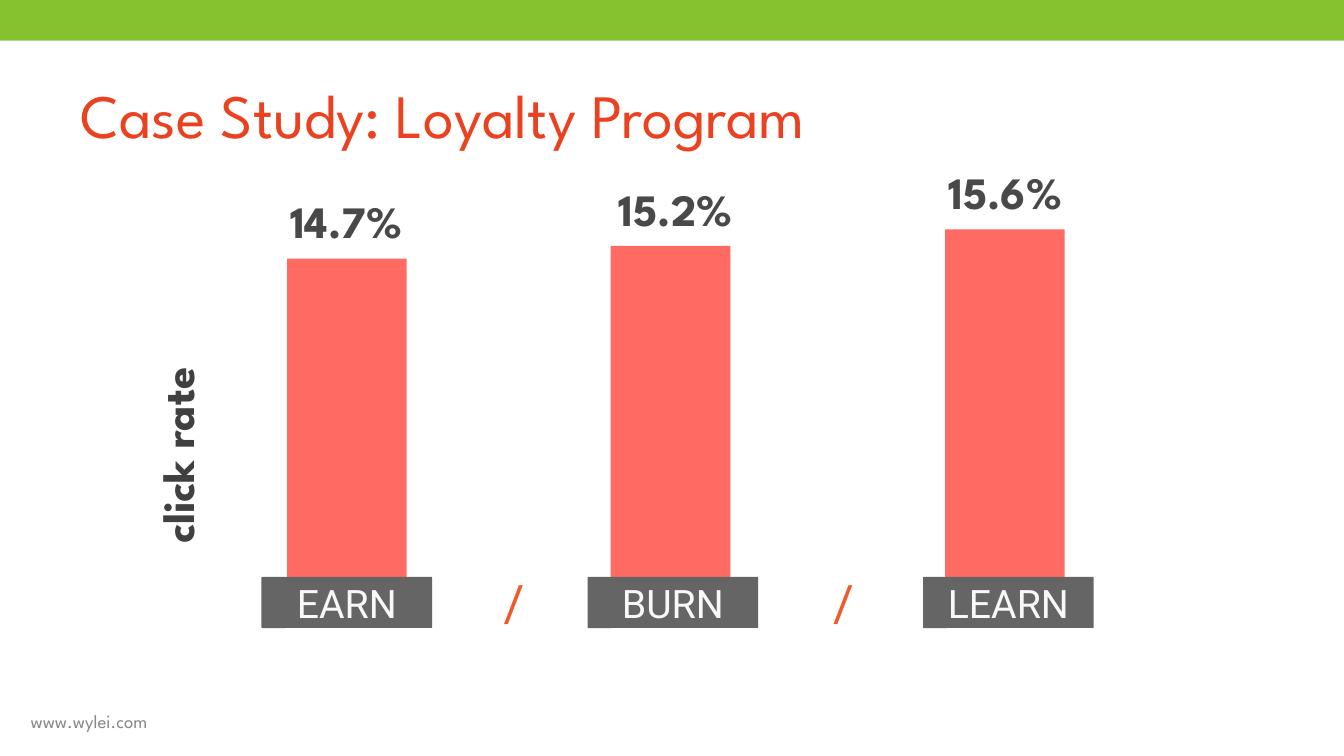
from pptx import Presentation
from pptx.dml.color import RGBColor
from pptx.enum.shapes import MSO_SHAPE as Shape
from pptx.enum.text import MSO_ANCHOR as Anchor, PP_ALIGN as Align
from pptx.util import Inches, Pt

COLORS = {
    "green": "86C230", "coral": "FF6B63", "tag": "656565",
    "title": "EA4220", "slash": "F05A2A", "value": "494949",
    "axis": "404040", "tag_text": "F8F8F8", "footer": "868686",
}
FORMATS = {
    "title": {"name": "League Spartan", "size": Pt(33), "bold": False},
    "value": {"name": "League Spartan", "size": Pt(24), "bold": True},
    "axis": {"name": "League Spartan", "size": Pt(24), "bold": True},
    "slash": {"name": "Roboto", "size": Pt(27)},
    "tag_text": {"name": "Roboto", "size": Pt(21)},
    "footer": {"name": "League Spartan", "size": Pt(10)},
}
# Grid cells are 0.1 inch square: 100 columns by 56.25 rows.
CELL = Inches(0.1)
COLUMNS, ROWS = 100, 56.25
BASELINE = 42.93
BAR_WIDTH, TAG_WIDTH, TAG_HEIGHT = 8.9, 12.7, 3.8
VALUE_WIDTH, VALUE_HEIGHT = 11.5, 5

# Name, value, bar left, bar top, tag left, value left, value top
BARS = [
    ("EARN", "14.7%", 21.36, 19.24, 19.46, 20, 13.9),
    ("BURN", "15.2%", 45.44, 18.3, 43.72, 44.52, 13.04),
    ("LEARN", "15.6%", 70.32, 17.06, 68.68, 69.04, 11.8),
]


def grid(*cells):
    return [round(cell * CELL) for cell in cells]


def write(frame, text, style, align=Align.LEFT):
    para = frame.paragraphs[0]
    para.alignment = align
    span = para.add_run()
    span.text = text
    for name, value in FORMATS[style].items():
        setattr(span.font, name, value)
    span.font.color.rgb = RGBColor.from_string(COLORS[style])


def add_block(page, place, color, kind=Shape.RECTANGLE):
    block = page.shapes.add_shape(kind, *grid(*place))
    block.shadow.inherit = False
    block.fill.solid()
    block.fill.fore_color.rgb = RGBColor.from_string(COLORS[color])
    block.line.fill.background()
    return block


def add_label(page, place, text, style, align=Align.LEFT):
    box = page.shapes.add_textbox(*grid(*place))
    box.text_frame.word_wrap = False
    write(box.text_frame, text, style, align)
    return box


def add_tag(page, left, text):
    tag = add_block(page, (left, BASELINE, TAG_WIDTH, TAG_HEIGHT), "tag",
                    Shape.ROUNDED_RECTANGLE)
    tag.adjustments[0] = 0.016
    frame = tag.text_frame
    frame.vertical_anchor = Anchor.MIDDLE
    for side in ("left", "right", "top", "bottom"):
        setattr(frame, f"margin_{side}", 0)
    write(frame, text, "tag_text", Align.CENTER)


def add_title(page, text):
    title = page.shapes.title
    title.left, title.top, title.width, title.height = grid(5, 5.25, 88.1, 7.2)
    title.text_frame.vertical_anchor = Anchor.TOP
    write(title.text_frame, text, "title")


def main():
    deck = Presentation()
    deck.slide_width, deck.slide_height = grid(COLUMNS, ROWS)
    page = deck.slides.add_slide(deck.slide_layouts[5])

    add_block(page, (0, 0, COLUMNS + 0.5, 3.02), "green")
    add_label(page, (1.3, 52.35, 25.1, 2.7), "www.wylei.com", "footer")
    add_title(page, "Case Study: Loyalty Program")

    for name, value, bar_left, bar_top, tag_left, value_left, value_top in BARS:
        add_block(page, (bar_left, bar_top, BAR_WIDTH, BASELINE - bar_top), "coral")
        add_label(page, (value_left, value_top, VALUE_WIDTH, VALUE_HEIGHT),
                  value, "value", Align.CENTER)
        add_tag(page, tag_left, name)

    for left in (36.5, 61):
        add_label(page, (left, 42, 3.6, 6.1), "/", "slash")
    axis = add_label(page, (4.5, 31.4, 17.3, 5), "click rate", "axis", Align.CENTER)
    axis.rotation = 270

    deck.save("out.pptx")


if __name__ == "__main__":
    main()
